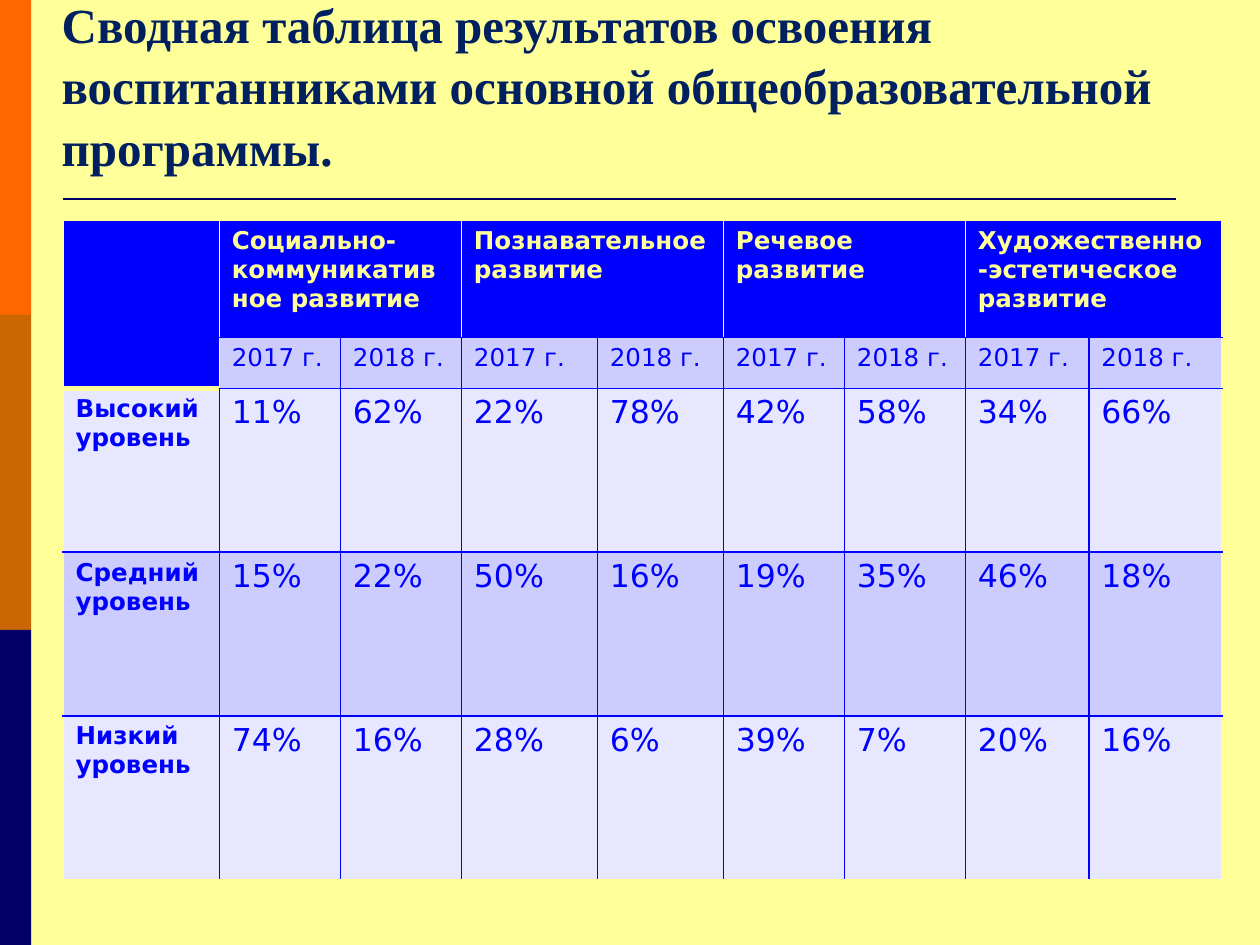
from lxml import etree
from pptx import Presentation, util as u
from pptx.dml import color
from pptx.enum import shapes, text
from pptx.oxml import ns

COLORS = {
    "page": "FFFF99", "cream": "FFFFCA", "blue": "0000FF", "title": "002060",
    "navy": "000066", "orange": "FF6600", "brown": "CC6600",
    "dark_band": "CCCCFF", "light_band": "E7E7FF",
}
RGB = {name: color.RGBColor.from_string(value) for name, value in COLORS.items()}


def format_text(para, ink, **values):
    for name, value in values.items():
        setattr(para.font, name, value)
    para.font.color.rgb = RGB[ink]


def add_border(cell, position, side, ink, points):
    line = etree.Element(ns.qn("a:ln" + side), w=str(u.Pt(points)))
    fill = etree.SubElement(line, ns.qn("a:solidFill"))
    etree.SubElement(fill, ns.qn("a:srgbClr"), val=COLORS[ink])
    cell._tc.get_or_add_tcPr().insert(position, line)


deck = Presentation()
deck.slide_width, deck.slide_height = u.Cm(25.4), u.Cm(19.05)
page = deck.slides.add_slide(deck.slide_layouts[5])
page.background.fill.solid()
page.background.fill.fore_color.rgb = RGB["page"]

# Side stripe in three equal parts
for index, ink in enumerate(["orange", "brown", "navy"]):
    bar = page.shapes.add_shape(shapes.MSO_SHAPE.RECTANGLE, 0, u.Cm(6.35 * index),
                                u.Cm(0.63), u.Cm(6.35))
    bar.shadow.inherit = False
    bar.fill.solid()
    bar.fill.fore_color.rgb = RGB[ink]
    bar.line.fill.background()

# Title and the rule under it
title = page.shapes.title
title.left, title.top, title.width, title.height = map(u.Cm, (0.99, 2.39, 22.86, 3.15))
title.text_frame.text = ("Сводная таблица результатов освоения воспитанниками "
                         "основной общеобразовательной программы.")
frame_format = {"word_wrap": True, "auto_size": text.MSO_AUTO_SIZE.NONE,
                "vertical_anchor": text.MSO_ANCHOR.BOTTOM, "margin_bottom": u.Cm(1.98)}
for name, value in frame_format.items():
    setattr(title.text_frame, name, value)
heading = title.text_frame.paragraphs[0]
heading.alignment = text.PP_ALIGN.LEFT
heading.line_spacing = 1.05
format_text(heading, "title", name="Times New Roman", size=u.Pt(28), bold=True)

rule = page.shapes.add_connector(shapes.MSO_CONNECTOR.STRAIGHT, u.Cm(1.27), u.Cm(4.01),
                                 u.Cm(23.7), u.Cm(4.01))
rule.line.color.rgb = RGB["navy"]
rule.line.width = u.Pt(1.5)
etree.SubElement(rule._element.spPr, ns.qn("a:effectLst"))

# Table contents
areas = ["Социально-коммуникативное развитие", "Познавательное развитие",
         "Речевое развитие", "Художественно-эстетическое развитие"]
levels = {
    "Высокий уровень": [11, 62, 22, 78, 42, 58, 34, 66],
    "Средний уровень": [15, 22, 50, 16, 19, 35, 46, 18],
    "Низкий уровень": [74, 16, 28, 6, 39, 7, 20, 16],
}
rows = [[""], ["", *["2017 г.", "2018 г."] * len(areas)]]
for area in areas:
    rows[0] += [area, ""]
for level, shares in levels.items():
    rows.append([level, *[f"{share}%" for share in shares]])

# Table grid
widths = [3.15, 2.44, 2.44, 2.74, 2.54, 2.44, 2.44, 2.49, 2.68]
heights = [2.35, 0.96, 3.3, 3.3, 3.3]
table = page.shapes.add_table(len(heights), len(widths), u.Cm(1.27), u.Cm(4.45),
                              u.Cm(sum(widths)), u.Cm(sum(heights))).table
for column, width in zip(table.columns, widths):
    column.width = u.Cm(width)
for row, height in zip(table.rows, heights):
    row.height = u.Cm(height)
table.cell(0, 0).merge(table.cell(1, 0))
for col in range(1, len(widths), 2):
    table.cell(0, col).merge(table.cell(0, col + 1))

# Cell text, bands and borders
for row, values in enumerate(rows):
    for col, value in enumerate(values):
        cell = table.cell(row, col)
        header = row == 0 or (row == 1 and col == 0)
        band = "blue" if header else "dark_band" if row % 2 else "light_band"
        cell.fill.solid()
        cell.fill.fore_color.rgb = RGB[band]
        if value:
            cell.text = value
            format_text(cell.text_frame.paragraphs[0], "page" if header else "blue",
                        name="DejaVu Sans", bold=row == 0 or col == 0,
                        size=u.Pt(18 if row > 1 and col > 0 else 14))

        borders = []
        for side, edge in (("L", col), ("R", col + 1)):
            if edge == 1 and row < 2:
                ink = "cream"
            else:
                ink = "page" if row == 0 or edge in (0, len(widths)) else "blue"
            borders.append((side, ink, 1))
        for side, edge in (("T", row), ("B", row + 1)):
            corner = col == 0 and edge <= 2
            ink = "page" if corner or edge in (0, len(heights)) else "blue"
            borders.append((side, ink, 3 if corner and side == "B" else 1))
        for position, border in enumerate(borders):
            add_border(cell, position, *border)

deck.save("out.pptx")
